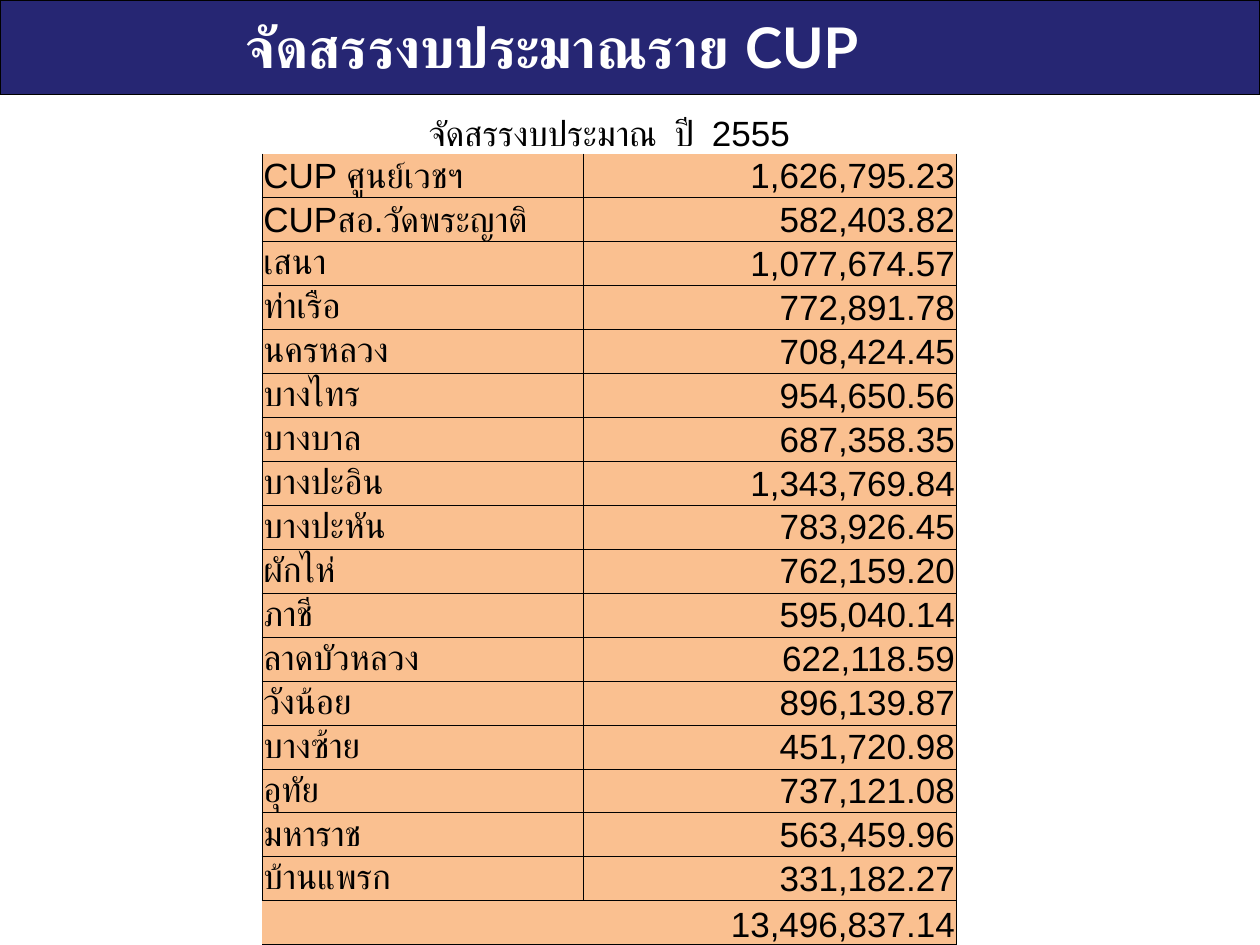
from lxml import etree
from pptx import Presentation
from pptx.dml.color import RGBColor
from pptx.enum import shapes, text
from pptx.oxml import ns
from pptx.util import Inches, Pt

COLORS = {"banner": "262673", "title": "FFFFFF", "ink": "000000", "cell": "FAC090"}

HEADING = "จัดสรรงบประมาณ  ปี  2555"
TOTAL = "13,496,837.14"
BUDGETS = [
    ("CUP ศูนย์เวชฯ", "1,626,795.23"),
    ("CUPสอ.วัดพระญาติ", "582,403.82"),
    ("เสนา", "1,077,674.57"),
    ("ท่าเรือ", "772,891.78"),
    ("นครหลวง", "708,424.45"),
    ("บางไทร", "954,650.56"),
    ("บางบาล", "687,358.35"),
    ("บางปะอิน", "1,343,769.84"),
    ("บางปะหัน", "783,926.45"),
    ("ผักไห่", "762,159.20"),
    ("ภาชี", "595,040.14"),
    ("ลาดบัวหลวง", "622,118.59"),
    ("วังน้อย", "896,139.87"),
    ("บางซ้าย", "451,720.98"),
    ("อุทัย", "737,121.08"),
    ("มหาราช", "563,459.96"),
    ("บ้านแพรก", "331,182.27"),
]

ALIGN = text.PP_ALIGN
ANCHOR = text.MSO_ANCHOR


def rgb(name):
    return RGBColor.from_string(COLORS[name])


def add_run(paragraph, wording, size, font, color, bold=False):
    run = paragraph.add_run()
    run.text = wording
    run.font.size = Pt(size)
    run.font.name = font
    run.font.bold = bold
    run.font.color.rgb = rgb(color)


def set_borders(cell, sides):
    properties = cell._tc.get_or_add_tcPr()
    for side in "LRTB":
        line = etree.SubElement(properties, ns.qn(f"a:ln{side}"), w=str(Pt(0.5)))
        if side in sides:
            fill = etree.SubElement(line, ns.qn("a:solidFill"))
            etree.SubElement(fill, ns.qn("a:srgbClr"), val=COLORS["ink"])
        else:
            etree.SubElement(line, ns.qn("a:noFill"))


def fill_cell(cell, wording, align, anchor, sides, fill="cell"):
    set_borders(cell, sides)
    if fill:
        cell.fill.solid()
        cell.fill.fore_color.rgb = rgb(fill)
    else:
        cell.fill.background()
    cell.margin_left = cell.margin_right = cell.margin_top = Inches(0.01)
    cell.margin_bottom = 0
    cell.vertical_anchor = anchor
    paragraph = cell.text_frame.paragraphs[0]
    paragraph.alignment = align
    if wording:
        add_run(paragraph, wording, 20, "Arial", "ink")


def add_banner(slide, left, top, width, height):
    banner = slide.shapes.add_shape(
        shapes.MSO_SHAPE.RECTANGLE, left, top, width, height)
    banner.shadow.inherit = False
    banner.fill.solid()
    banner.fill.fore_color.rgb = rgb("banner")
    banner.line.color.rgb = rgb("ink")
    banner.line.width = Pt(0.75)

    title = slide.shapes.add_textbox(
        left + Inches(0.17), top + Inches(0.03), Inches(8.42), Inches(0.67))
    frame = title.text_frame
    frame.word_wrap = True
    frame.vertical_anchor = ANCHOR.MIDDLE
    frame.paragraphs[0].alignment = ALIGN.CENTER
    add_run(frame.paragraphs[0], "จัดสรรงบประมาณราย CUP", 32, "Lato", "title", True)


def add_budget_table(slide, left, top, width, height):
    row_count = len(BUDGETS) + 2
    table = slide.shapes.add_table(row_count, 2, left, top, width, height).table
    table.first_row = table.horz_banding = False
    table.columns[0].width = Inches(2.55)
    table.columns[1].width = width - Inches(2.55)
    for row in table.rows:
        row.height = height // row_count

    heading = table.cell(0, 0)
    heading.merge(table.cell(0, 1))
    fill_cell(heading, HEADING, ALIGN.CENTER, ANCHOR.BOTTOM, "", None)
    set_borders(table.cell(0, 1), "")

    for index, (unit, amount) in enumerate(BUDGETS, 1):
        sides = "LRB" if index == 1 else "LRTB"
        fill_cell(table.cell(index, 0), unit, ALIGN.LEFT, ANCHOR.MIDDLE, sides)
        fill_cell(table.cell(index, 1), amount, ALIGN.RIGHT, ANCHOR.MIDDLE, sides)

    last = row_count - 1
    fill_cell(table.cell(last, 0), "", ALIGN.LEFT, ANCHOR.BOTTOM, "TB")
    fill_cell(table.cell(last, 1), TOTAL, ALIGN.RIGHT, ANCHOR.BOTTOM, "RTB")


def main():
    deck = Presentation()
    deck.slide_width = Inches(10)
    deck.slide_height = Inches(7.5)
    slide = deck.slides.add_slide(deck.slide_layouts[6])
    add_banner(slide, 0, 0, deck.slide_width, Inches(0.75))
    add_budget_table(slide, Inches(2.08), Inches(0.87), Inches(5.51), Inches(6.63))
    deck.save("out.pptx")


if __name__ == "__main__":
    main()
